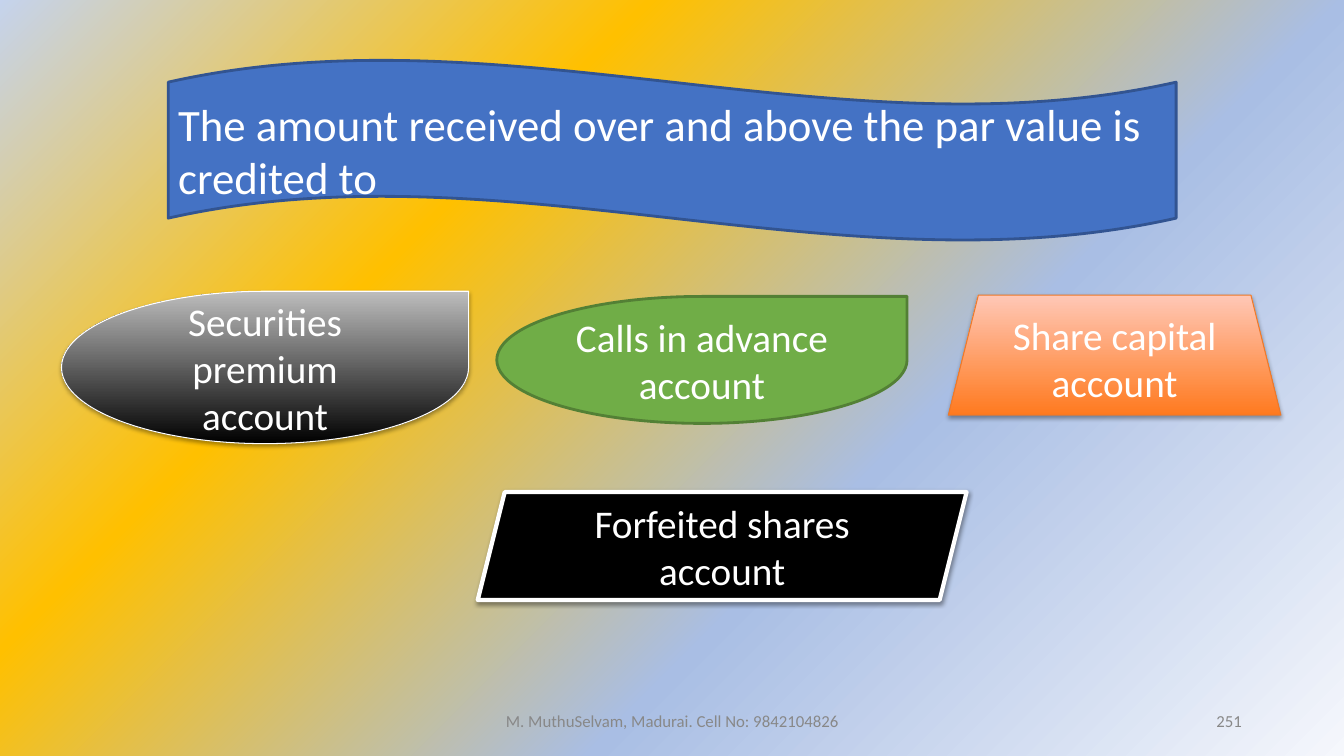
import pptx
import pptx.dml.color
import pptx.enum.shapes
import pptx.enum.text
import pptx.oxml
import pptx.oxml.ns
import pptx.util
from lxml import etree

Cm = pptx.util.Cm
Pt = pptx.util.Pt
RGBColor = pptx.dml.color.RGBColor
Shape = pptx.enum.shapes.MSO_SHAPE
Align = pptx.enum.text.PP_ALIGN
qn = pptx.oxml.ns.qn

FONT = "Calibri"
WHITE = RGBColor(0xFF, 0xFF, 0xFF)
BLACK = RGBColor(0x00, 0x00, 0x00)
BLUE = RGBColor(0x44, 0x72, 0xC4)
DARK_BLUE = RGBColor(0x32, 0x54, 0x91)
GREEN = RGBColor(0x70, 0xAD, 0x47)
DARK_GREEN = RGBColor(0x53, 0x80, 0x35)
SILVER = RGBColor(0xBD, 0xBD, 0xBD)
ORANGE = RGBColor(0xFF, 0x7A, 0x1F)
PEACH = RGBColor(0xFF, 0xC7, 0xB6)
RUST = RGBColor(0xEC, 0x79, 0x2B)
GREY = RGBColor(0x88, 0x88, 0x88)

# Stops as (percent, colour), spreading from the bottom right corner
BACKGROUND = [
    (0, RGBColor(0xF5, 0xF7, 0xFC)),
    (36, RGBColor(0xA9, 0xBE, 0xE4)),
    (69, RGBColor(0xFF, 0xC0, 0x00)),
    (100, RGBColor(0xC5, 0xD3, 0xED)),
]

# Text, shape, box in cm, fill colours from bottom to top, line colour and
# width, shadow (opacity in percent, distance in points), size, alignment
CARDS = [
    ("The amount received over and above the par value is credited to",
     Shape.WAVE, (4.24, 1.5, 25.4, 4.57), [BLUE], DARK_BLUE, 2, None, 32, Align.LEFT),
    ("Securities premium account",
     Shape.TEAR, (1.55, 7.34, 10.26, 3.84), [BLACK, SILVER], WHITE, 0.75, (35, 1.8), 28, Align.CENTER),
    ("Share capital account",
     Shape.TRAPEZOID, (23.9, 7.44, 8.38, 3.02), [ORANGE, PEACH], RUST, 0.75, (35, 1.8), 28, Align.CENTER),
    ("Forfeited shares account",
     Shape.PARALLELOGRAM, (12.04, 12.4, 12.32, 2.72), [BLACK], WHITE, 3, (38, 1.6), 28, Align.CENTER),
    ("Calls in advance account",
     Shape.TEAR, (12.52, 7.47, 10.34, 3.2), [GREEN], DARK_GREEN, 2, None, 28, Align.CENTER),
]

FOOTERS = [
    ("M. MuthuSelvam, Madurai. Cell No: 9842104826", (11.23, 17.65, 11.43, 1.02), Align.CENTER),
    ("251", (23.93, 17.65, 7.62, 1.02), Align.RIGHT),
]


def paint_background(slide):
    slide.background.fill.gradient()
    gradient = slide.element.find(".//" + qn("a:gradFill"))
    for child in list(gradient):
        gradient.remove(child)
    stops = etree.SubElement(gradient, qn("a:gsLst"))
    for percent, color in BACKGROUND:
        stop = etree.SubElement(stops, qn("a:gs"), pos=str(percent * 1000))
        etree.SubElement(stop, qn("a:srgbClr"), val=str(color))
    circle = etree.SubElement(gradient, qn("a:path"), path="circle")
    etree.SubElement(circle, qn("a:fillToRect"), l="100000", t="100000")
    etree.SubElement(gradient, qn("a:tileRect"), r="-100000", b="-100000")


def paint_shape(shape, colors):
    if len(colors) == 1:
        shape.fill.solid()
        shape.fill.fore_color.rgb = colors[0]
        return
    shape.fill.gradient()
    shape.fill.gradient_angle = 90
    for stop, color, position in zip(shape.fill.gradient_stops, colors, (0, 1)):
        stop.color.rgb = color
        stop.position = position


def add_shadow(shape, opacity, distance):
    effects = shape.element.spPr.find(qn("a:effectLst"))
    shadow = etree.SubElement(
        effects, qn("a:outerShdw"), blurRad=str(Pt(3.1)), dist=str(Pt(distance)),
        dir="5400000", rotWithShape="0")
    color = etree.SubElement(shadow, qn("a:srgbClr"), val=str(BLACK))
    etree.SubElement(color, qn("a:alpha"), val=str(opacity * 1000))


def write_text(shape, text, size, color, alignment):
    frame = shape.text_frame
    frame.word_wrap = True
    frame.vertical_anchor = pptx.enum.text.MSO_ANCHOR.MIDDLE
    paragraph = frame.paragraphs[0]
    paragraph.alignment = alignment
    run = paragraph.add_run()
    run.text = text
    run.font.name = FONT
    run.font.size = Pt(size)
    run.font.color.rgb = color


def main():
    presentation = pptx.Presentation()
    presentation.slide_width = Cm(33.87)
    presentation.slide_height = Cm(19.05)
    slide = presentation.slides.add_slide(presentation.slide_layouts[6])
    paint_background(slide)

    for text, kind, box, colors, line_color, line_width, shadow, size, alignment in CARDS:
        shape = slide.shapes.add_shape(kind, *map(Cm, box))
        paint_shape(shape, colors)
        shape.line.color.rgb = line_color
        shape.line.width = Pt(line_width)
        shape.shadow.inherit = False
        if shadow:
            add_shadow(shape, *shadow)
        write_text(shape, text, size, WHITE, alignment)

    for text, box, alignment in FOOTERS:
        footer = slide.shapes.add_textbox(*map(Cm, box))
        write_text(footer, text, 12, GREY, alignment)

    presentation.save("out.pptx")


if __name__ == "__main__":
    main()
